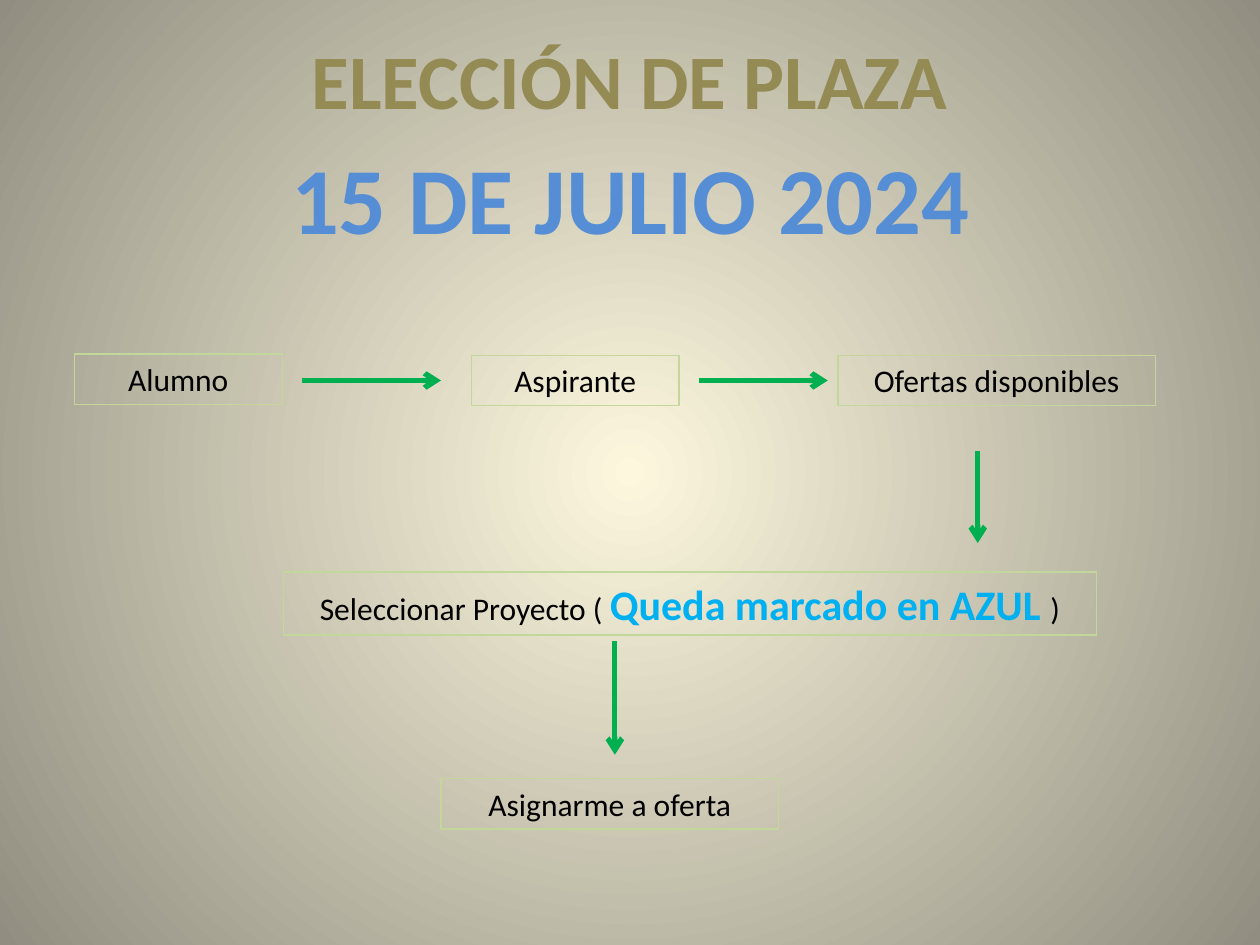
from dataclasses import dataclass

from lxml import etree
from pptx import Presentation
from pptx import util as u
from pptx.dml.color import RGBColor
from pptx.enum import shapes, text
from pptx.oxml.ns import qn


@dataclass(frozen=True)
class Theme:
    """Colours, font and type sizes of the slide."""
    font: str = "Calibri"
    center: str = "FCF7DD"
    edge: str = "918E81"
    heading: str = "948A54"
    date: str = "558ED5"
    ink: str = "000000"
    highlight: str = "00B0F0"
    border: str = "C3D69B"
    arrow: str = "00B050"
    heading_size: int = 44
    date_size: int = 54
    body_size: int = 18
    highlight_size: int = 24


class SlideBuilder:
    """Draws styled elements on one slide."""

    def __init__(self, slide, theme):
        self.slide = slide
        self.theme = theme

    def background(self):
        """Fill the background with a radial gradient."""
        fill = self.slide.background.fill
        fill.gradient()
        for stop, color in zip(fill.gradient_stops, (self.theme.center, self.theme.edge)):
            stop.color.rgb = RGBColor.from_string(color)
        linear = next(self.slide._element.iter(qn("a:lin")))
        radial = etree.Element(qn("a:path"), {"path": "circle"})
        etree.SubElement(radial, qn("a:fillToRect"), dict.fromkeys("ltrb", "50000"))
        linear.getparent().replace(linear, radial)

    def style(self, font, size, color, bold=False):
        """Apply the theme font with a size and colour."""
        font.name = self.theme.font
        font.size = u.Pt(size)
        font.bold = bold
        font.color.rgb = RGBColor.from_string(color)

    def label(self, shape, runs):
        """Set one centred paragraph of (words, size, colour, bold) runs."""
        frame = shape.text_frame
        frame.word_wrap = True
        frame.auto_size = text.MSO_AUTO_SIZE.SHAPE_TO_FIT_TEXT
        frame.vertical_anchor = text.MSO_ANCHOR.TOP
        paragraph = frame.paragraphs[0]
        paragraph.alignment = text.PP_ALIGN.CENTER
        for words, *look in runs:
            run = paragraph.add_run()
            run.text = words
            if len(runs) > 1:
                self.style(run.font, *look)
        if len(runs) == 1:
            self.style(paragraph.font, *runs[0][1:])

    def title(self, words, left, top, width, height):
        """Place the heading in the title placeholder."""
        shape = self.slide.shapes.title
        shape.left, shape.top = u.Inches(left), u.Inches(top)
        shape.width, shape.height = u.Inches(width), u.Inches(height)
        self.label(shape, [(words, self.theme.heading_size, self.theme.heading, True)])

    def date(self, words, left, top, width, height):
        """Add the large date line."""
        shape = self.slide.shapes.add_textbox(*map(u.Inches, (left, top, width, height)))
        self.label(shape, [(words, self.theme.date_size, self.theme.date, True)])

    def step(self, runs, left, top, width, height=0.4):
        """Add an outlined process step."""
        shape = self.slide.shapes.add_shape(
            shapes.MSO_SHAPE.RECTANGLE, *map(u.Inches, (left, top, width, height)))
        shape.shadow.inherit = False
        shape.fill.background()
        shape.line.color.rgb = RGBColor.from_string(self.theme.border)
        shape.line.width = u.Pt(0.75)
        self.label(shape, runs)

    def arrow(self, *ends):
        """Add a straight arrow between two points."""
        connector = self.slide.shapes.add_connector(
            shapes.MSO_CONNECTOR.STRAIGHT, *map(u.Inches, ends))
        connector.line.color.rgb = RGBColor.from_string(self.theme.arrow)
        connector.line.width = u.Pt(3)
        properties = connector._element.spPr
        etree.SubElement(properties.find(qn("a:ln")), qn("a:tailEnd"), type="arrow")
        etree.SubElement(properties, qn("a:effectLst"))


def main():
    """Build the place selection slide."""
    presentation = Presentation()
    presentation.slide_width, presentation.slide_height = u.Inches(10), u.Inches(7.5)
    theme = Theme()
    slide = presentation.slides.add_slide(presentation.slide_layouts[5])
    builder = SlideBuilder(slide, theme)
    builder.background()
    builder.title("ELECCIÓN DE PLAZA", 1.85, 0.21, 6.3, 0.84)
    builder.date("15 DE JULIO 2024", 1.54, 1.06, 6.93, 1.01)

    body = (theme.body_size, theme.ink)
    for words, left, top, width in (
        ("Alumno", 0.59, 2.81, 1.65),
        ("Aspirante", 3.74, 2.82, 1.65),
        ("Ofertas disponibles", 6.65, 2.82, 2.52),
        ("Asignarme a oferta", 3.5, 6.18, 2.68),
    ):
        builder.step([(words, *body)], left, top, width)
    builder.step([
        ("Seleccionar Proyecto ( ", *body),
        ("Queda marcado en AZUL ", theme.highlight_size, theme.highlight, True),
        (")", *body),
    ], 2.25, 4.54, 6.45, 0.5)

    for ends in (
        (2.4, 3.02, 3.5, 3.02),
        (5.55, 3.02, 6.57, 3.02),
        (7.76, 3.58, 7.76, 4.31),
        (4.88, 5.09, 4.88, 5.99),
    ):
        builder.arrow(*ends)
    presentation.save("out.pptx")


if __name__ == "__main__":
    main()
